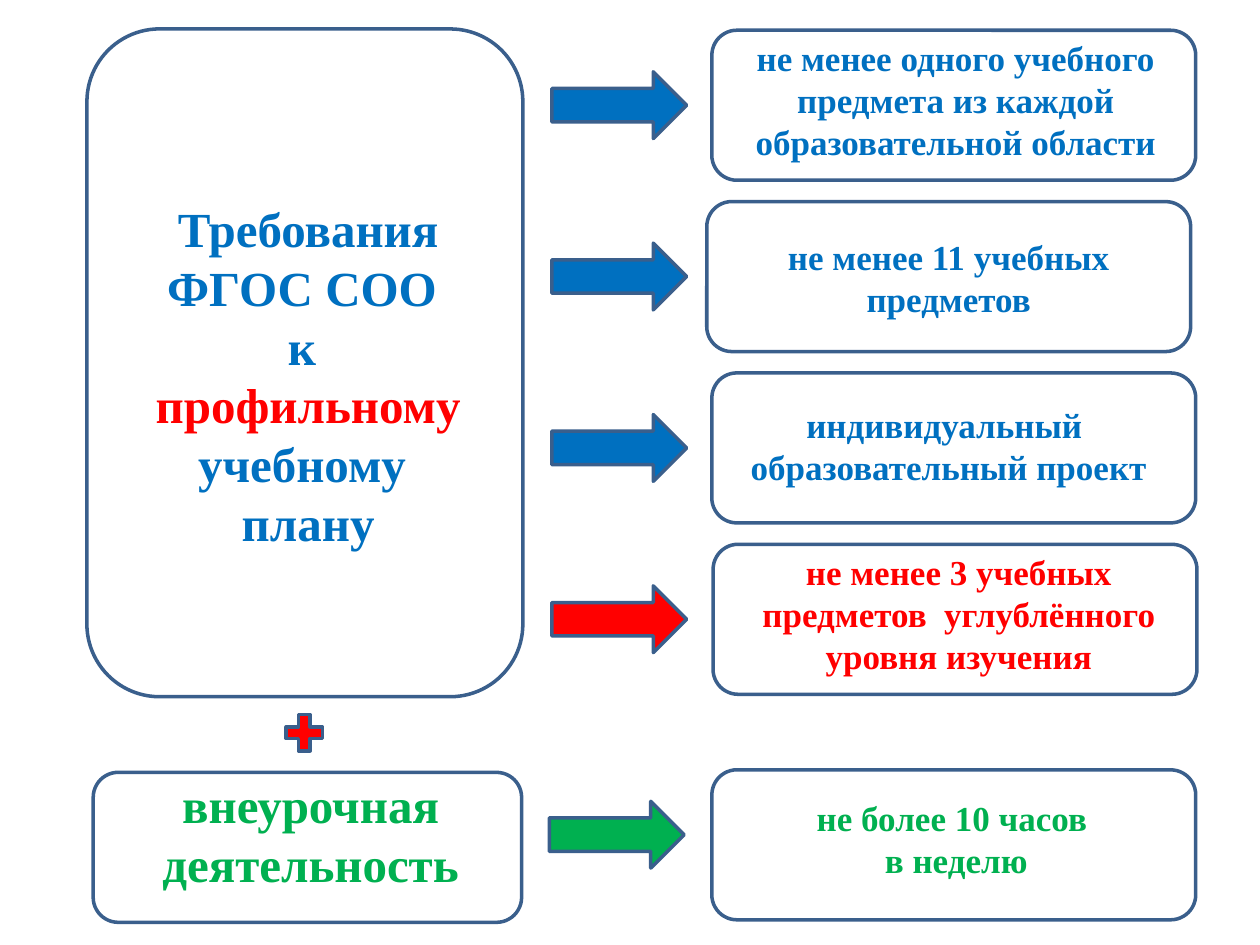
from pptx import Presentation
from pptx.dml.color import RGBColor
from pptx.enum.shapes import MSO_SHAPE as SHAPE
from pptx.enum.text import MSO_ANCHOR as ANCHOR, PP_ALIGN as ALIGN
from pptx.util import Inches, Pt

COLORS = {"blue": "0070C0", "red": "FF0000", "green": "00B050",
          "outline": "3A5F8C", "white": "FFFFFF"}
FONT = "Times New Roman"
ROW_TOP, ROW_STEP = 0.24, 1.36
CARD_W, CARD_H = 3.84, 1.19


def rgb(name):
    return RGBColor.from_string(COLORS[name])


def add_shape(slide, kind, box, fill=None, line="outline"):
    sp = slide.shapes.add_shape(kind, *map(Inches, box))
    sp.shadow.inherit = False
    if fill:
        sp.fill.solid()
        sp.fill.fore_color.rgb = rgb(fill)
    else:
        sp.fill.background()
    if line:
        sp.line.color.rgb = rgb(line)
        sp.line.width = Pt(2)
    else:
        sp.line.fill.background()
    return sp


def write_lines(tf, lines, size=20, color="blue", accents=None, anchor=ANCHOR.TOP):
    tf.word_wrap = True
    tf.vertical_anchor = anchor
    for i, text in enumerate(lines):
        p = tf.add_paragraph() if i else tf.paragraphs[0]
        p.alignment = ALIGN.CENTER
        r = p.add_run()
        r.text = text
        r.font.name, r.font.size, r.font.bold = FONT, Pt(size), True
        r.font.color.rgb = rgb((accents or {}).get(text, color))


def add_text(slide, box, lines, **fmt):
    tb = slide.shapes.add_textbox(*map(Inches, box))
    write_lines(tb.text_frame, lines, **fmt)


def add_requirements(slide, left, top, width, height):
    sp = add_shape(slide, SHAPE.RECTANGLE,
                   (left + 0.26, top + 0.95, 2.99, 3.59), fill="white", line=None)
    write_lines(sp.text_frame,
                ["Требования", "ФГОС СОО ", "к ", "профильному", "учебному ", "плану"],
                size=28, accents={"профильному": "red"}, anchor=ANCHOR.MIDDLE)
    add_shape(slide, SHAPE.ROUNDED_RECTANGLE, (left, top, width, height))


def add_extracurricular(slide, left, top, width, height):
    add_shape(slide, SHAPE.MATH_PLUS, (left + 1.48, top - 0.51, 0.39, 0.39), fill="red")
    add_shape(slide, SHAPE.ROUNDED_RECTANGLE, (left, top, width, height))
    add_text(slide, (left - 0.08, top - 0.03, 3.61, 1.04),
             ["внеурочная", "деятельность"], size=28, color="green")


def add_rule(slide, left, top, lines, color, text_box, arrow=(4.38, 0.33)):
    arrow_left, arrow_drop = arrow
    dx, dy, width, height = text_box
    add_shape(slide, SHAPE.RIGHT_ARROW,
              (arrow_left, top + arrow_drop, 1.07, 0.53), fill=color)
    add_shape(slide, SHAPE.ROUNDED_RECTANGLE, (left, top, CARD_W, CARD_H))
    add_text(slide, (left + dx, top + dy, width, height), lines, color=color)


def main():
    prs = Presentation()
    prs.slide_width, prs.slide_height = Inches(10), Inches(7.5)
    slide = prs.slides.add_slide(prs.slide_layouts[6])

    add_requirements(slide, 0.69, 0.23, 3.46, 5.3)
    add_extracurricular(slide, 0.74, 6.13, 3.4, CARD_H)

    rules = [
        (5.65, ["не менее одного учебного предмета из каждой образовательной области"],
         "blue", (-0.01, 0, 3.89, 1.11)),
        (5.61, ["не менее 11 учебных предметов"], "blue", (0.02, 0.22, 3.8, 0.77)),
        (5.65, ["индивидуальный ", "образовательный проект"],
         "blue", (-0.02, 0.19, 3.8, 0.77)),
        (5.66, ["не менее 3 учебных предметов  углублённого уровня изучения"],
         "red", (0.08, 0, 3.74, 1.11)),
    ]
    for i, (left, lines, color, text_box) in enumerate(rules):
        add_rule(slide, left, ROW_TOP + i * ROW_STEP, lines, color, text_box)
    add_rule(slide, 5.65, 6.11, ["не более 10 часов", " в неделю"], "green",
             (0.1, 0.16, 3.61, 0.77), arrow=(4.36, 0.25))

    prs.save("out.pptx")


if __name__ == "__main__":
    main()
